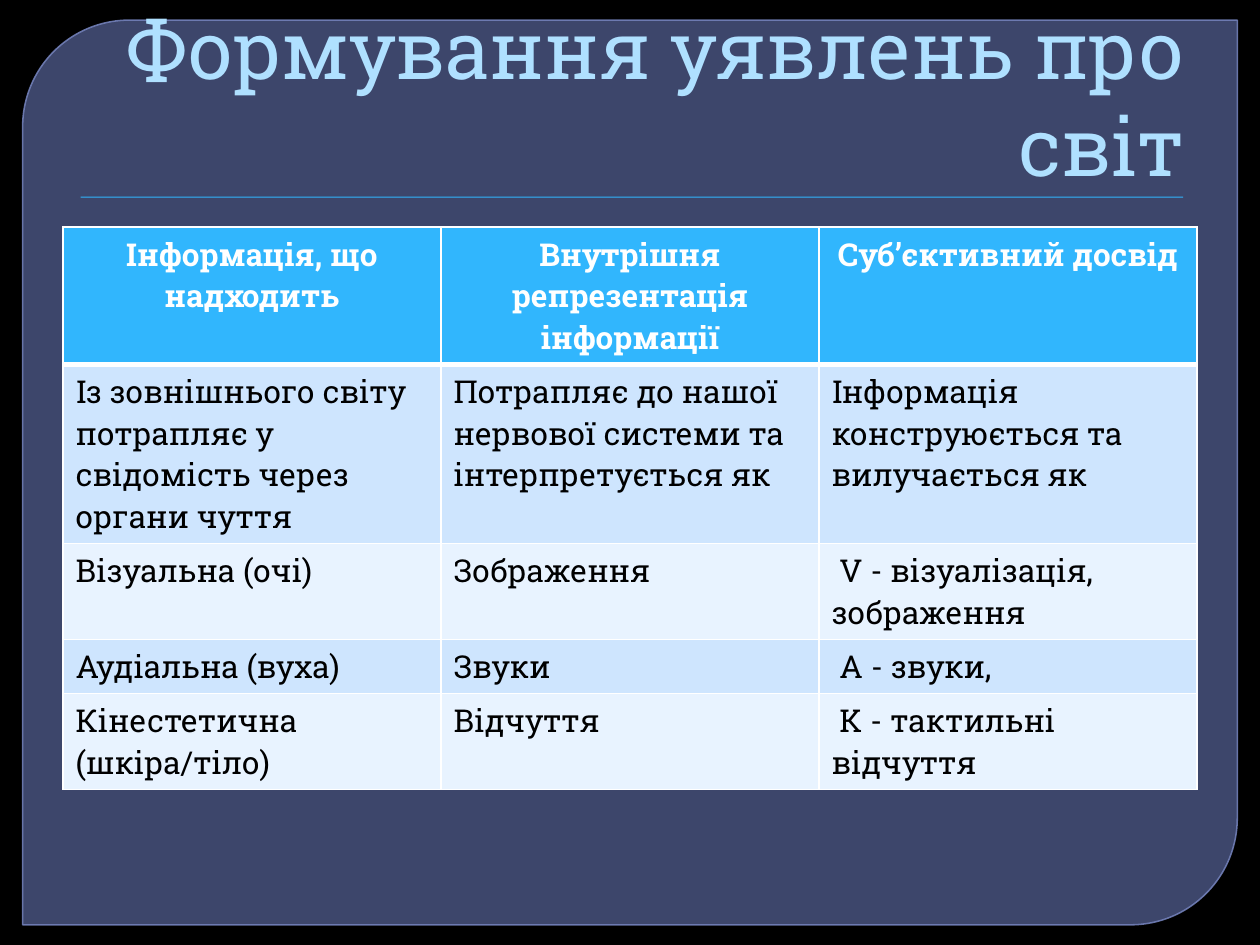
from lxml import etree
from pptx import Presentation
from pptx import util as u
from pptx.dml import color
from pptx.enum import shapes, text
from pptx.oxml import ns

FONT = "Roboto Slab"
ROWS = [
    ["Інформація, що надходить", "Внутрішня репрезентація інформації", "Суб’єктивний досвід"],
    ["Із зовнішнього світу потрапляє у свідомість через органи чуття",
     "Потрапляє до нашої нервової системи та інтерпретується як",
     "Інформація конструюється та вилучається як"],
    ["Візуальна (очі)", "Зображення", " V - візуалізація, зображення"],
    ["Аудіальна (вуха)", "Звуки", " A - звуки,"],
    ["Кінестетична (шкіра/тіло)", "Відчуття", " K - тактильні відчуття"],
]


def paint(fill, value, opacity=100):
    fill.solid()
    fill.fore_color.rgb = color.RGBColor.from_string(value)
    if opacity < 100:
        tone = fill._xPr.find(ns.qn("a:solidFill"))[0]
        etree.SubElement(tone, ns.qn("a:alpha"), val=str(opacity * 1000))


def set_font(para, size, value, bold=False):
    para.font.name = FONT
    para.font.size = u.Pt(size)
    para.font.bold = bold
    paint(para.font.fill, value)


def set_borders(cell, widths):
    props = cell._tc.get_or_add_tcPr()
    for index, (side, width) in enumerate(zip("LRTB", widths)):
        line = etree.Element(ns.qn(f"a:ln{side}"), w=str(u.Pt(width)))
        fill = etree.SubElement(line, ns.qn("a:solidFill"))
        etree.SubElement(fill, ns.qn("a:srgbClr"), val="FFFFFF")
        props.insert(index, line)


def add_frame(page, left, top, width, height):
    panel = page.shapes.add_shape(
        shapes.MSO_SHAPE.ROUND_2_DIAG_RECTANGLE, left, top, width, height)
    panel.adjustments[0] = 0.118
    panel.adjustments[1] = 0
    panel.shadow.inherit = False
    paint(panel.fill, "5F6DA5", 65)
    paint(panel.line.fill, "7482BB", 88)
    panel.line.width = u.Pt(0.87)

    rule = page.shapes.add_shape(
        shapes.MSO_SHAPE.RECTANGLE, left + u.Inches(0.46), top + u.Inches(1.4),
        width - u.Inches(0.89), u.Inches(0.01))
    rule.shadow.inherit = False
    paint(rule.fill, "31B6FD")
    rule.line.fill.background()


def place_title(page, left, top, width, height):
    title = page.shapes.title
    page.shapes._spTree.append(title._element)
    title.left, title.top, title.width, title.height = left, top, width, height
    frame = title.text_frame
    frame.text = "Формування уявлень про світ"
    frame.word_wrap = True
    frame.auto_size = text.MSO_AUTO_SIZE.NONE
    frame.vertical_anchor = text.MSO_ANCHOR.BOTTOM
    frame.margin_bottom = 0
    para = frame.paragraphs[0]
    para.alignment = text.PP_ALIGN.RIGHT
    set_font(para, 46, "AFE0FF")


def add_perception_table(page, left, top, width, row_height):
    table = page.shapes.add_table(
        len(ROWS), len(ROWS[0]), left, top, width, row_height * len(ROWS)).table
    for row, values in enumerate(ROWS):
        header = row == 0
        shade = "31B6FD" if header else ("E8F3FF", "CEE5FE")[row % 2]
        for column, value in enumerate(values):
            cell = table.cell(row, column)
            cell.text = value
            paint(cell.fill, shade)
            set_borders(cell, (1, 1, 3 if row == 1 else 1, 3 if header else 1))
            para = cell.text_frame.paragraphs[0]
            para.alignment = text.PP_ALIGN.CENTER if header else text.PP_ALIGN.LEFT
            set_font(para, 18, "FFFFFF" if header else "000000", header)


def main():
    deck = Presentation()
    deck.slide_width, deck.slide_height = u.Inches(10), u.Inches(7.5)
    page = deck.slides.add_slide(deck.slide_layouts[5])
    paint(page.background.fill, "000000")
    add_frame(page, u.Inches(0.18), u.Inches(0.16), u.Inches(9.64), u.Inches(7.18))
    place_title(page, u.Inches(0.5), u.Inches(0.28), u.Inches(9), u.Inches(1.25))
    add_perception_table(page, u.Inches(0.5), u.Inches(1.8), u.Inches(9), u.Inches(0.41))
    deck.save("out.pptx")


if __name__ == "__main__":
    main()
